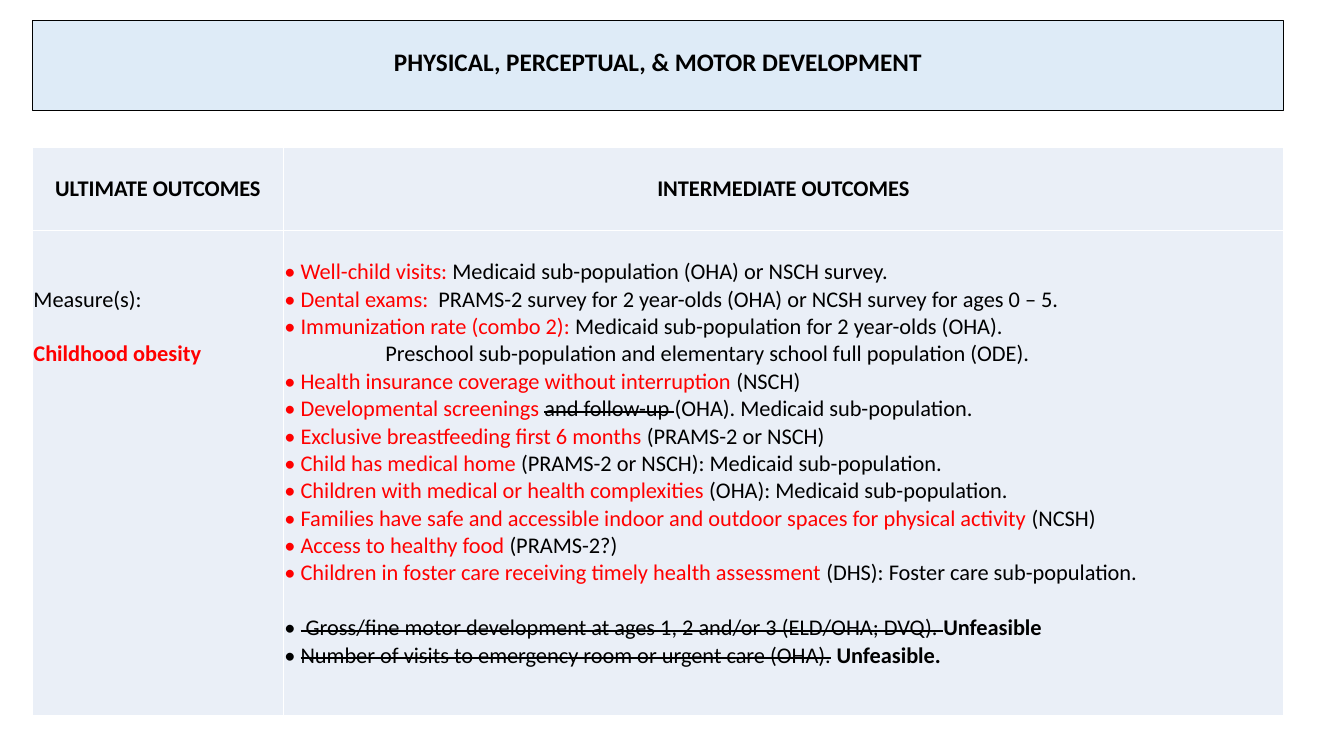
from dataclasses import dataclass

from pptx import Presentation, util as u
from pptx.dml.color import RGBColor
from pptx.enum import text
from pptx.oxml import parse_xml
from pptx.oxml.ns import nsdecls


@dataclass(frozen=True)
class Theme:
    font: str = "Calibri"
    title_size: float = 18
    body_size: float = 16
    line_height: float = 19.5
    ink: str = "000000"
    accent: str = "FF0000"
    banner: str = "DEEBF7"
    cell: str = "EAEFF7"
    border: str = "FFFFFF"


@dataclass(frozen=True)
class Run:
    text: str
    color: str
    bold: bool = False
    strike: bool = False


@dataclass(frozen=True)
class Para:
    runs: tuple[Run, ...]
    bullet: bool = False
    indent: float = 0
    before: float = 0
    centered: bool = False


T = Theme()
LEFT, WIDTH = 23.2, 893.5
HANG = 11.5


def measure(name: str, source: str) -> Para:
    return Para((Run(name, T.accent), Run(source, T.ink)), bullet=True)


def heading(label: str) -> list[Para]:
    return [Para((Run(label, T.ink, bold=True),), centered=True)]


ULTIMATE = [
    Para((Run("Measure(s):", T.ink),)),
    Para((Run("Childhood obesity", T.accent, bold=True),), before=T.line_height),
]
INTERMEDIATE = [
    measure("Well-child visits: ", "Medicaid sub-population (OHA) or NSCH survey."),
    measure("Dental exams:  ", "PRAMS-2 survey for 2 year-olds (OHA) or NCSH survey for ages 0 – 5."),
    measure("Immunization rate (combo 2): ", "Medicaid sub-population for 2 year-olds (OHA)."),
    Para((Run("Preschool sub-population and elementary school full population (ODE).", T.ink),), indent=72),
    measure("Health insurance coverage without interruption ", "(NSCH)"),
    Para((Run("Developmental screenings ", T.accent), Run("and follow-up ", T.ink, strike=True),
          Run("(OHA). Medicaid sub-population.", T.ink)), bullet=True),
    measure("Exclusive breastfeeding first 6 months ", "(PRAMS-2 or NSCH)"),
    measure("Child has medical home ", "(PRAMS-2 or NSCH): Medicaid sub-population."),
    measure("Children with medical or health complexities ", "(OHA): Medicaid sub-population."),
    measure("Families have safe and accessible indoor and outdoor spaces for physical activity ", "(NCSH)"),
    measure("Access to healthy food ", "(PRAMS-2?)"),
    measure("Children in foster care receiving timely health assessment ", "(DHS): Foster care sub-population."),
    Para((Run(" Gross/fine motor development at ages 1, 2 and/or 3 (ELD/OHA; DVQ). ", T.ink, strike=True),
          Run("Unfeasible", T.ink, bold=True)), bullet=True, before=T.line_height),
    Para((Run("Number of visits to emergency room or urgent care (OHA).", T.ink, strike=True),
          Run(" ", T.ink), Run("Unfeasible.", T.ink, bold=True)), bullet=True),
]


def set_all(obj, values: dict) -> None:
    for name, value in values.items():
        setattr(obj, name, value)


def add_run(p, run: Run, size: float) -> None:
    r = p.add_run()
    r.text = run.text
    set_all(r.font, {"name": T.font, "size": u.Pt(size), "bold": run.bold})
    r.font.color.rgb = RGBColor.from_string(run.color)
    if run.strike:
        r._r.get_or_add_rPr().set("strike", "sngStrike")


def add_bullet(p, color: str) -> None:
    pPr = p._p.get_or_add_pPr()
    pPr.set("marL", str(u.Pt(HANG)))
    pPr.set("indent", str(-u.Pt(HANG)))
    for xml in (f'<a:buClr {nsdecls("a")}><a:srgbClr val="{color}"/></a:buClr>',
                f'<a:buFont {nsdecls("a")} typeface="{T.font}"/>',
                f'<a:buChar {nsdecls("a")} char="•"/>'):
        pPr.append(parse_xml(xml))


def fill_text(tf, paras: list[Para], size: float) -> None:
    for i, para in enumerate(paras):
        p = tf.add_paragraph() if i else tf.paragraphs[0]
        p.alignment = text.PP_ALIGN.CENTER if para.centered else text.PP_ALIGN.LEFT
        p.space_before = u.Pt(para.before)
        if para.indent:
            p._p.get_or_add_pPr().set("marL", str(u.Pt(para.indent)))
        if para.bullet:
            add_bullet(p, para.runs[0].color)
        for run in para.runs:
            add_run(p, run, size)


def fill_cell(cell, paras: list[Para], anchor: text.MSO_ANCHOR, top: float) -> None:
    set_all(cell, {"margin_left": u.Pt(0.72), "margin_right": u.Pt(0.72), "margin_top": u.Pt(top),
                   "margin_bottom": u.Pt(0), "vertical_anchor": anchor})
    cell.fill.solid()
    cell.fill.fore_color.rgb = RGBColor.from_string(T.cell)
    for i, side in enumerate("LRTB"):
        cell._tc.get_or_add_tcPr().insert(i, parse_xml(
            f'<a:ln{side} {nsdecls("a")} w="{u.Pt(1)}"><a:solidFill>'
            f'<a:srgbClr val="{T.border}"/></a:solidFill></a:ln{side}>'))
    fill_text(cell.text_frame, paras, T.body_size)


def add_title(s) -> None:
    sp = s.shapes.title
    set_all(sp, {"left": u.Pt(LEFT), "top": u.Pt(14.4), "width": u.Pt(WIDTH), "height": u.Pt(64.8)})
    sp.fill.solid()
    sp.fill.fore_color.rgb = RGBColor.from_string(T.banner)
    sp.line.color.rgb = RGBColor.from_string(T.ink)
    sp.line.width = u.Pt(0.75)
    tf = sp.text_frame
    set_all(tf, {"vertical_anchor": text.MSO_ANCHOR.MIDDLE, "word_wrap": True,
                 "auto_size": text.MSO_AUTO_SIZE.NONE, "margin_bottom": u.Pt(6.5)})
    fill_text(tf, heading("PHYSICAL, PERCEPTUAL, & MOTOR DEVELOPMENT"), T.title_size)
    tf.paragraphs[0].line_spacing = 0.9


def add_outcomes(s) -> None:
    widths, heights = (179.3, 714.2), (59, 347)
    table = s.shapes.add_table(2, 2, u.Pt(LEFT), u.Pt(105.4), u.Pt(WIDTH), u.Pt(sum(heights))).table
    set_all(table, {"first_row": False, "horz_banding": False})
    for column, width in zip(table.columns, widths):
        column.width = u.Pt(width)
    for row, height in zip(table.rows, heights):
        row.height = u.Pt(height)
    for col, label in enumerate(("ULTIMATE OUTCOMES", "INTERMEDIATE OUTCOMES")):
        fill_cell(table.cell(0, col), heading(label), text.MSO_ANCHOR.MIDDLE, 0.72)
    for col, (paras, skipped) in enumerate(((ULTIMATE, 2), (INTERMEDIATE, 1))):
        fill_cell(table.cell(1, col), paras, text.MSO_ANCHOR.TOP, 0.72 + skipped * T.line_height)


def main() -> None:
    prs = Presentation()
    set_all(prs, {"slide_width": u.Pt(960), "slide_height": u.Pt(540)})
    s = prs.slides.add_slide(prs.slide_layouts[5])
    add_title(s)
    add_outcomes(s)
    prs.save("out.pptx")


if __name__ == "__main__":
    main()
